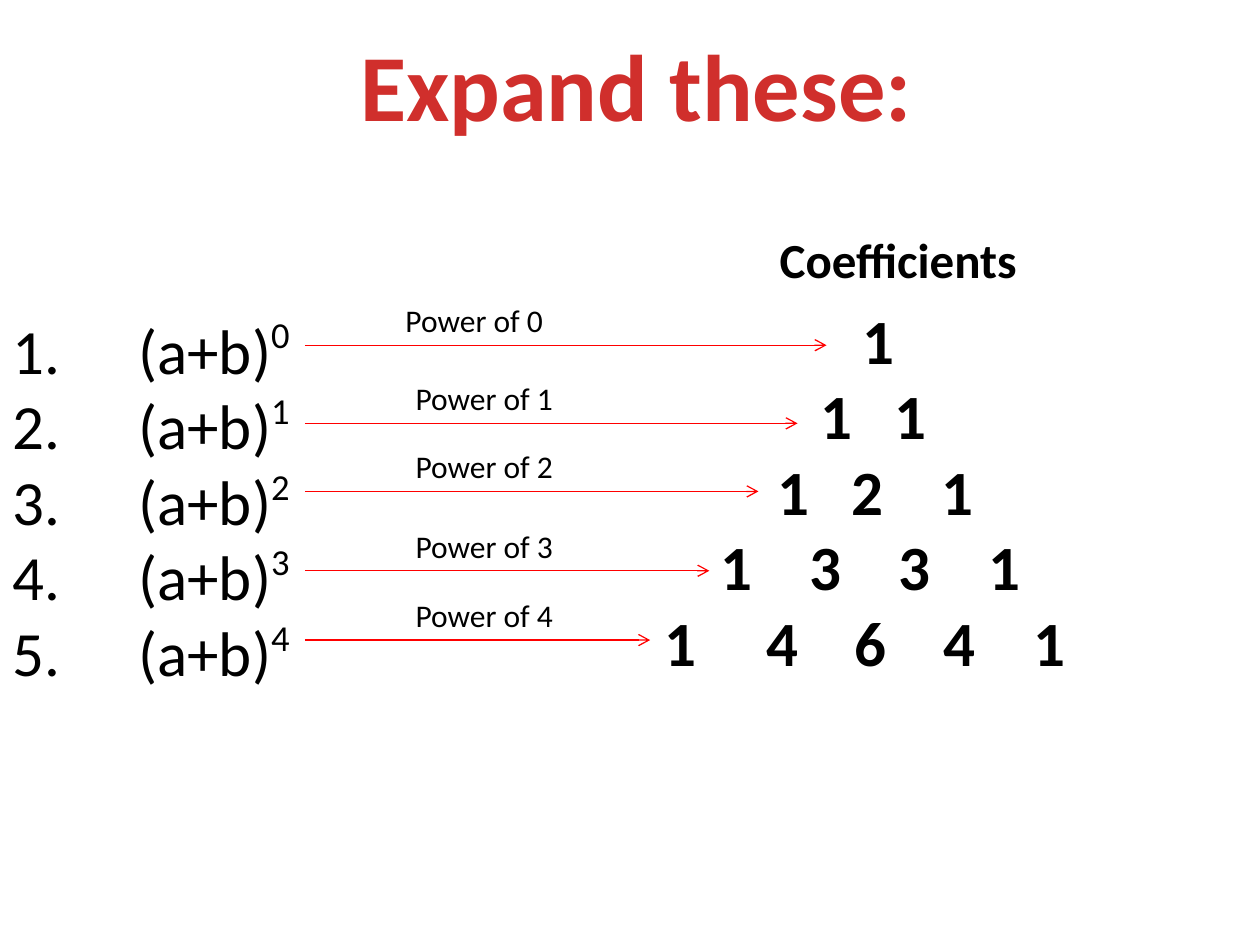
from dataclasses import dataclass
from typing import Optional

from lxml import etree
from pptx import Presentation
from pptx.dml.color import RGBColor
from pptx.enum import shapes, text
from pptx.oxml import parse_xml
from pptx.oxml.ns import nsdecls, qn
from pptx.util import Inches, Pt


@dataclass(frozen=True)
class Theme:
    font: str = "Calibri"
    ink: str = "000000"
    arrow: str = "FF0000"
    title_stops: tuple = ((0, "FC7C7A"), (75, "D02F2C"), (100, "C70500"))
    title_size: int = 54
    row_size: int = 36
    heading_size: int = 28
    label_size: int = 18
    arrow_width: float = 0.75


@dataclass(frozen=True)
class Box:
    left: float
    top: float
    width: float
    height: float


@dataclass(frozen=True)
class Power:
    exponent: int
    label_left: float
    arrow_y: float
    arrow_end: float
    coefficients: tuple
    centers: tuple


THEME = Theme()
TITLE = Box(1.56, 0.16, 6.98, 1.01)
HEADING = Box(6.09, 1.77, 3.36, 1.04)
TRIANGLE = Box(1.72, 2.34, 7.5, 3.13)
EXPRESSIONS = Box(0, 2.42, 6.64, 3.53)
ARROW_START = 2.42
LABEL_RISE = 0.4
INSET = 0.1
POWERS = (
    Power(0, 3.12, 2.74, 6.56, (1,), (6.97,)),
    Power(1, 3.2, 3.36, 6.33, (1, 1), (6.64, 7.23)),
    Power(2, 3.2, 3.9, 6.02, (1, 2, 1), (6.3, 6.89, 7.6)),
    Power(3, 3.2, 4.53, 5.63, (1, 3, 3, 1), (5.85, 6.55, 7.26, 7.97)),
    Power(4, 3.2, 5.08, 5.16, (1, 4, 6, 4, 1), (5.4, 6.21, 6.91, 7.62, 8.33)),
)


def add_run(p, words: str, size: int, bold: bool = False,
            color: Optional[str] = THEME.ink, raised: bool = False):
    r = p.add_run()
    r.text = words
    r.font.name = THEME.font
    r.font.size = Pt(size)
    r.font.bold = bold
    if color:
        r.font.color.rgb = RGBColor.from_string(color)
    if raised:
        r.font._element.set("baseline", "40000")
    return r


def add_text_box(s, box: Box):
    sp = s.shapes.add_textbox(*map(Inches, (box.left, box.top, box.width, box.height)))
    tf = sp.text_frame
    tf.word_wrap = True
    tf.auto_size = text.MSO_AUTO_SIZE.SHAPE_TO_FIT_TEXT
    return tf


def next_paragraph(tf, index: int):
    return tf.paragraphs[0] if index == 0 else tf.add_paragraph()


def format_title(s) -> None:
    sp = s.shapes.title
    sp.left, sp.top, sp.width, sp.height = map(
        Inches, (TITLE.left, TITLE.top, TITLE.width, TITLE.height))
    p = sp.text_frame.paragraphs[0]
    p.alignment = text.PP_ALIGN.CENTER
    r = add_run(p, "Expand these:", THEME.title_size, True, None)
    stops = "".join(f'<a:gs pos="{at * 1000}"><a:srgbClr val="{color}"/></a:gs>'
                    for at, color in THEME.title_stops)
    r.font._element.insert(0, parse_xml(
        f'<a:gradFill {nsdecls("a")}><a:gsLst>{stops}</a:gsLst>'
        '<a:lin ang="5400000"/></a:gradFill>'))


def add_triangle(s) -> None:
    tf = add_text_box(s, TRIANGLE)
    for i, power in enumerate(POWERS):
        p = next_paragraph(tf, i)
        tabs = etree.SubElement(p._p.get_or_add_pPr(), qn("a:tabLst"))
        for center in power.centers:
            offset = Inches(center - TRIANGLE.left - INSET)
            etree.SubElement(tabs, qn("a:tab"), pos=str(offset), algn="ctr")
        row = "".join(f"\t{value}" for value in power.coefficients)
        add_run(p, row, THEME.row_size, True)


def add_expressions(s) -> None:
    tf = add_text_box(s, EXPRESSIONS)
    for i, power in enumerate(POWERS):
        p = next_paragraph(tf, i)
        pPr = p._p.get_or_add_pPr()
        pPr.set("marL", str(Inches(1)))
        pPr.set("indent", str(Inches(-1)))
        etree.SubElement(pPr, qn("a:buFont"), typeface=THEME.font)
        etree.SubElement(pPr, qn("a:buAutoNum"), type="arabicPeriod")
        add_run(p, "(a+b)", THEME.row_size)
        add_run(p, str(power.exponent), THEME.row_size, raised=True)


def add_arrow(s, power: Power) -> None:
    y = Inches(power.arrow_y)
    line = s.shapes.add_connector(shapes.MSO_CONNECTOR.STRAIGHT,
                                  Inches(ARROW_START), y, Inches(power.arrow_end), y)
    line.line.color.rgb = RGBColor.from_string(THEME.arrow)
    line.line.width = Pt(THEME.arrow_width)
    etree.SubElement(line.line._get_or_add_ln(), qn("a:tailEnd"), type="arrow")
    etree.SubElement(line._element.spPr, qn("a:effectLst"))


def add_label(s, power: Power) -> None:
    tf = add_text_box(s, Box(power.label_left, power.arrow_y - LABEL_RISE, 2.5, 0.4))
    add_run(tf.paragraphs[0], f"Power of {power.exponent}", THEME.label_size)


def main() -> None:
    prs = Presentation()
    prs.slide_width, prs.slide_height = Inches(10), Inches(7.5)
    s = prs.slides.add_slide(prs.slide_layouts[5])
    format_title(s)
    add_triangle(s)
    add_expressions(s)
    for power in POWERS:
        add_arrow(s, power)
        add_label(s, power)
    heading = add_text_box(s, HEADING)
    add_run(heading.paragraphs[0], "Coefficients", THEME.heading_size, True)
    prs.save("out.pptx")


if __name__ == "__main__":
    main()
